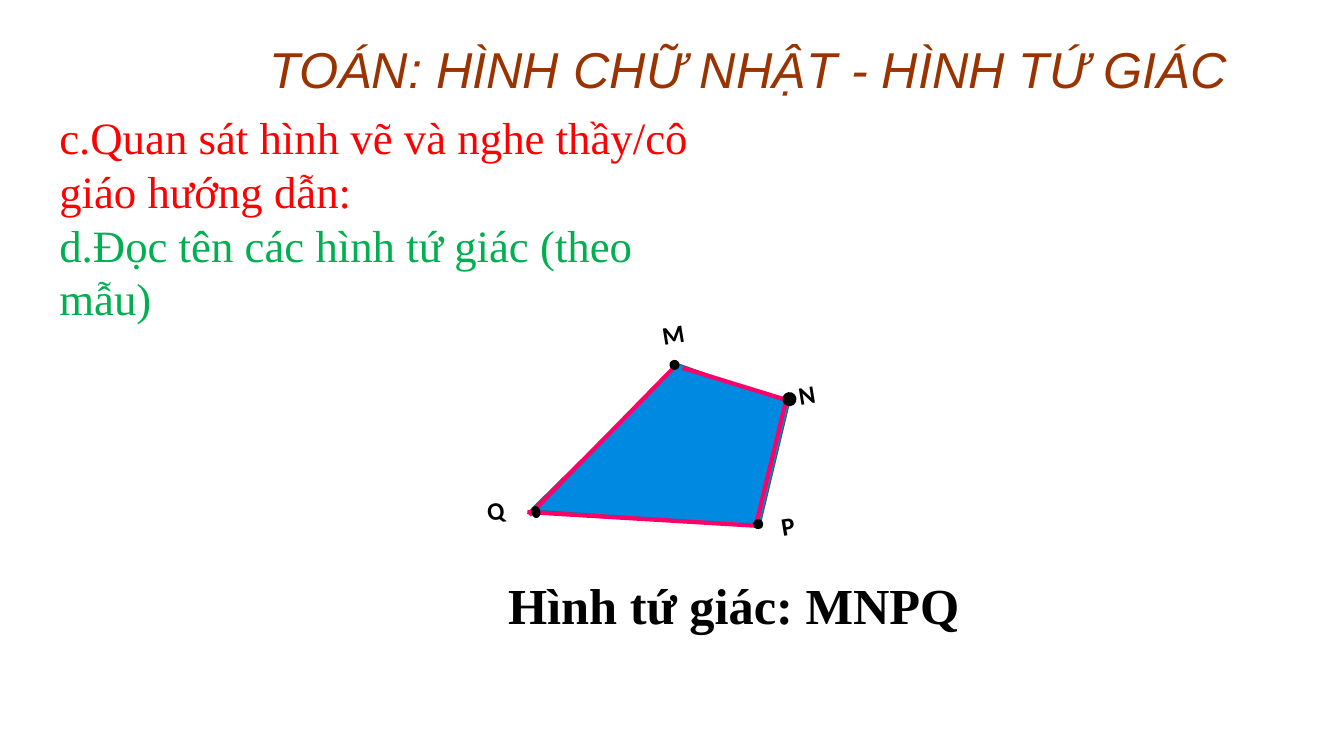
import pptx
import pptx.util
import pptx.dml.color
import pptx.enum.shapes
import pptx.enum.text
import pptx.oxml
import lxml.etree
from pptx.util import Inches, Pt

RGBColor = pptx.dml.color.RGBColor
BROWN = RGBColor(0x99, 0x33, 0x00)
ORANGE = RGBColor(0xFF, 0x66, 0x00)
RED = RGBColor(0xFF, 0x00, 0x00)
GREEN = RGBColor(0x00, 0xB0, 0x50)
BLACK = RGBColor(0x00, 0x00, 0x00)
BLUE = RGBColor(0x00, 0x89, 0xE1)
SLATE = RGBColor(0x44, 0x54, 0x6A)
PINK = RGBColor(0xFF, 0x00, 0x66)
NS = "http://schemas.openxmlformats.org/drawingml/2006/main"
TILT = 350.6


def add_text(p, text, font="Times New Roman", size=36, color=BLACK,
             bold=False, italic=False, outline=None):
    r = p.add_run()
    r.text = text
    f = r.font
    f.name, f.size, f.bold, f.italic = font, Pt(size), bold, italic
    f.color.rgb = color
    if outline is not None:
        ln = pptx.oxml.parse_xml(
            f'<a:ln xmlns:a="{NS}" w="9525"><a:solidFill>'
            f'<a:srgbClr val="{outline}"/></a:solidFill></a:ln>')
        f._element.insert(0, ln)


class SlideBuilder:
    def __init__(self, prs):
        self.s = prs.slides.add_slide(prs.slide_layouts[5])

    def title(self, x, y, w, h, text, **fmt):
        sp = self.s.shapes.title
        sp.left, sp.top, sp.width, sp.height = map(Inches, (x, y, w, h))
        tf = sp.text_frame
        tf.word_wrap = True
        tf.auto_size = pptx.enum.text.MSO_AUTO_SIZE.NONE
        tf.vertical_anchor = pptx.enum.text.MSO_ANCHOR.TOP
        tf.paragraphs[0].alignment = pptx.enum.text.PP_ALIGN.LEFT
        add_text(tf.paragraphs[0], text, **fmt)

    def text(self, x, y, w, h, paragraphs, rotation=0):
        sp = self.s.shapes.add_textbox(*map(Inches, (x, y, w, h)))
        sp.rotation = rotation
        tf = sp.text_frame
        tf.word_wrap = True
        tf.auto_size = pptx.enum.text.MSO_AUTO_SIZE.SHAPE_TO_FIT_TEXT
        for i, (text, fmt) in enumerate(paragraphs):
            p = tf.add_paragraph() if i else tf.paragraphs[0]
            add_text(p, text, **fmt)

    def polygon(self, points, fill, line):
        pts = [(Inches(x), Inches(y)) for x, y in points]
        fb = self.s.shapes.build_freeform(*pts[0])
        fb.add_line_segments(pts[1:], close=True)
        sp = fb.convert_to_shape()
        sp.shadow.inherit = False
        sp.fill.solid()
        sp.fill.fore_color.rgb = fill
        sp.line.color.rgb = line
        sp.line.width = Pt(0.75)

    def line(self, x1, y1, x2, y2, color, width):
        c = self.s.shapes.add_connector(
            pptx.enum.shapes.MSO_CONNECTOR.STRAIGHT,
            *map(Inches, (x1, y1, x2, y2)))
        c.line.color.rgb = color
        c.line.width = Pt(width)
        lxml.etree.SubElement(c._element.spPr, f"{{{NS}}}effectLst")

    def dot(self, x, y, w, h):
        sp = self.s.shapes.add_shape(
            pptx.enum.shapes.MSO_SHAPE.OVAL, *map(Inches, (x, y, w, h)))
        sp.rotation = TILT
        sp.shadow.inherit = False
        sp.fill.solid()
        sp.fill.fore_color.rgb = BLACK
        sp.line.fill.background()


def main():
    prs = pptx.Presentation()
    prs.slide_width, prs.slide_height = Inches(13.33), Inches(7.5)
    b = SlideBuilder(prs)

    # Title and caption
    b.title(2.57, 0.33, 10.2, 0.44, "TOÁN: HÌNH CHỮ NHẬT - HÌNH TỨ GIÁC",
            font="Arial", color=BROWN, italic=True, outline=ORANGE)
    b.text(4.94, 5.65, 4.72, 0.71, [("Hình tứ giác: MNPQ", dict(bold=True))])

    # Quadrilateral and its vertex labels
    b.polygon([(7.54, 5.21), (5.26, 5.06), (6.73, 3.61), (7.83, 4)], BLUE, SLATE)
    for name, x, y, w in [("M", 6.47, 3.12, 0.33), ("N", 7.82, 3.72, 0.31),
                          ("P", 7.65, 5.02, 0.31), ("Q", 4.73, 4.86, 0.44)]:
        b.text(x, y, w, 0.4, [(name, dict(font="Calibri", size=18, bold=True))],
               rotation=TILT)

    # Sides
    for side in [(5.25, 5.11, 6.7, 3.63), (6.77, 3.65, 7.84, 3.98),
                 (7.8, 3.96, 7.5, 5.2), (5.23, 5.08, 7.56, 5.22)]:
        b.line(*side, PINK, 3)

    # Vertices
    for vertex in [(6.64, 3.57, 0.1, 0.1), (7.76, 3.89, 0.14, 0.14),
                   (5.27, 5.02, 0.09, 0.12), (7.47, 5.15, 0.1, 0.1)]:
        b.dot(*vertex)

    # Instructions
    b.text(0.49, 1.04, 6.67, 2.26, [
        ("c.Quan sát hình vẽ và nghe thầy/cô giáo hướng dẫn:",
         dict(size=32, color=RED)),
        ("d.Đọc tên các hình tứ giác (theo mẫu)", dict(size=32, color=GREEN))])

    prs.save("out.pptx")


if __name__ == "__main__":
    main()
